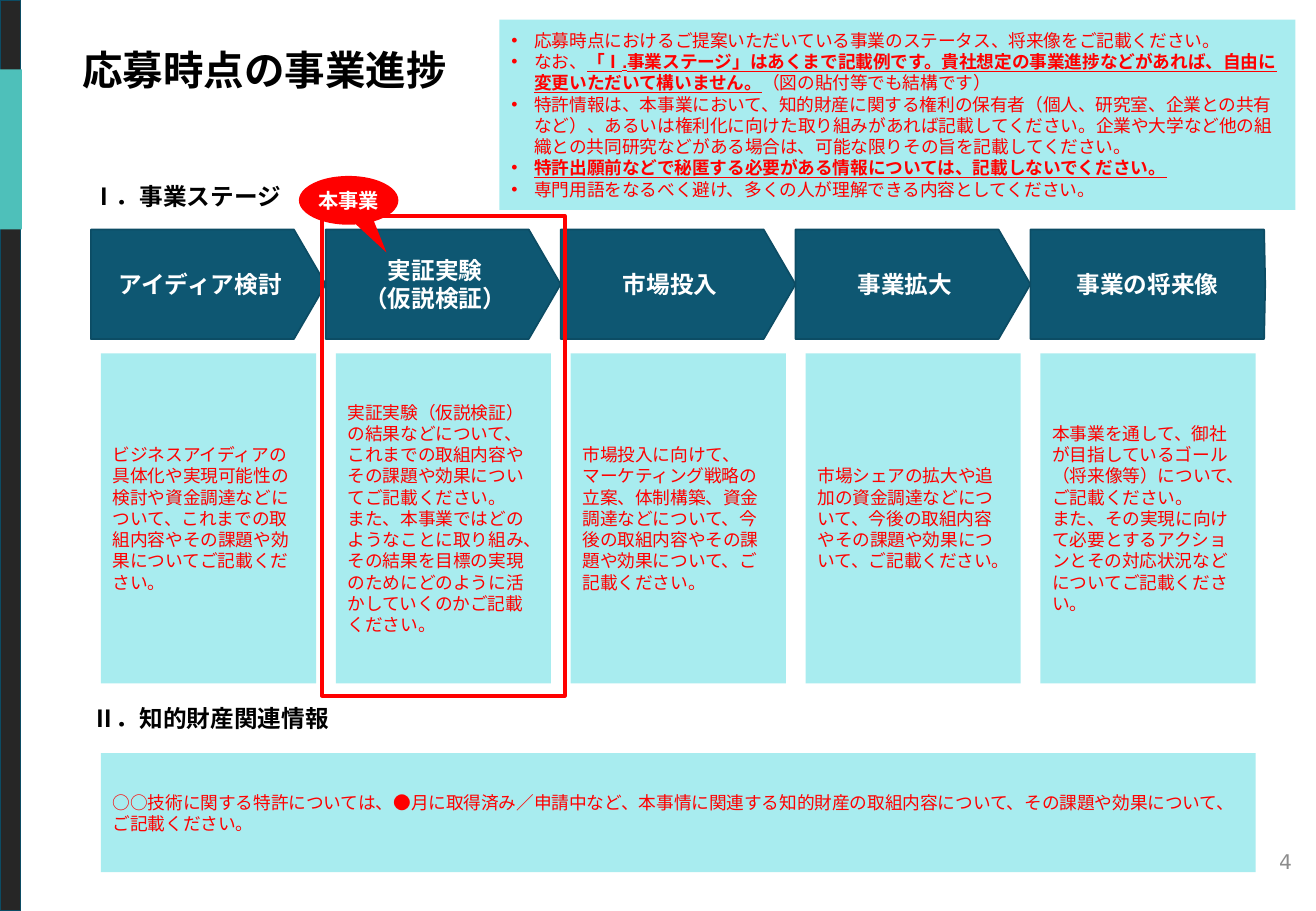
from copy import deepcopy

from pptx import Presentation
from pptx import util as u
from pptx.dml.color import RGBColor
from pptx.enum import lang, shapes, text
from pptx.oxml import ns, xmlchemy

COLORS = {
    "navy": "0E5772", "edge": "0C4C64", "pale": "A8ECEF", "teal": "4EC0BA",
    "dark": "262626", "red": "FF0000", "white": "FFFFFF", "black": "000000",
    "grey": "8C8C8C",
}
SHAPE = shapes.MSO_SHAPE
ALIGN = text.PP_ALIGN
MIDDLE = text.MSO_ANCHOR.MIDDLE

prs = Presentation()
prs.slide_width, prs.slide_height = u.Cm(27.51), u.Cm(19.05)
s = prs.slides.add_slide(prs.slide_layouts[6])


def add_box(kind, x, y, w, h, fill=None, line=None, weight=1):
    """Add a preset shape, or a text box when kind is None."""
    place = [u.Cm(v) for v in (x, y, w, h)]
    if kind is None:
        sp = s.shapes.add_textbox(*place)
    else:
        sp = s.shapes.add_shape(kind, *place)
        sp.shadow.inherit = False
        if fill:
            sp.fill.solid()
            sp.fill.fore_color.rgb = RGBColor.from_string(COLORS[fill])
        else:
            sp.fill.background()
        if line:
            sp.line.color.rgb = RGBColor.from_string(COLORS[line])
            sp.line.width = u.Pt(weight)
        else:
            sp.line.fill.background()
    sp.text_frame.word_wrap = True
    return sp


def style(tf, size, color, bold=False, align=ALIGN.LEFT, font="Arial", anchor=MIDDLE):
    """Format every run and line break of a text frame."""
    tf.vertical_anchor = anchor
    for p in tf.paragraphs:
        p.alignment = align
        for r in p.runs:
            r.font.name, r.font.size = font, u.Pt(size)
            r.font.bold = r.font.bold or bold
            r.font.color.rgb = RGBColor.from_string(COLORS[color])
            r.font.language_id = lang.MSO_LANGUAGE_ID.JAPANESE
        for br in p._p.findall(ns.qn("a:br")):
            br.append(deepcopy(p.runs[0]._r.rPr))


# Side bar
add_box(SHAPE.RECTANGLE, 0, 0, 0.43, 19.05, "dark", "edge")
add_box(SHAPE.RECTANGLE, -0.02, 1.45, 0.48, 3.35, "teal")

# Title and section headings
for words, x, y, w, h, size in [
    ("応募時点の事業進捗", 1.47, 0.81, 23.7, 1.27, 24),
    ("Ⅰ．事業ステージ", 1.68, 3.68, 11.86, 0.86, 14),
    ("Ⅱ．知的財産関連情報", 1.68, 14.6, 11.86, 0.86, 14),
]:
    tf = add_box(None, x, y, w, h).text_frame
    tf.text = words
    style(tf, size, "black", bold=True, anchor=text.MSO_ANCHOR.TOP)

# Instructions: each bullet is a list of (words, emphasised)
NOTES = [
    [("応募時点におけるご提案いただいている事業のステータス、将来像をご記載ください。", False)],
    [("なお、", False),
     ("「Ⅰ.事業ステージ」はあくまで記載例です。貴社想定の事業進捗などがあれば、"
      "自由に変更いただいて構いません。", True),
     ("（図の貼付等でも結構です）", False)],
    [("特許情報は、本事業において、知的財産に関する権利の保有者（個人、研究室、企業との共有など）、"
      "あるいは権利化に向けた取り組みがあれば記載してください。"
      "企業や大学など他の組織との共同研究などがある場合は、可能な限りその旨を記載してください。", False)],
    [("特許出願前などで秘匿する必要がある情報については、記載しないでください。", True)],
    [("専門用語をなるべく避け、多くの人が理解できる内容としてください。", False)],
]
tf = add_box(SHAPE.RECTANGLE, 10.44, 0.41, 16.64, 3.98, "pale").text_frame
for i, note in enumerate(NOTES):
    p = tf.add_paragraph() if i else tf.paragraphs[0]
    for words, emphasised in note:
        r = p.add_run()
        r.text = words
        r.font.bold = r.font.underline = emphasised
    pPr = p._p.get_or_add_pPr()
    pPr.set("marL", str(u.Cm(0.48)))
    pPr.set("indent", str(u.Cm(-0.48)))
    for tag, key, value in [("a:buFont", "typeface", "Arial"), ("a:buChar", "char", "•")]:
        bullet = xmlchemy.OxmlElement(tag)
        bullet.set(key, value)
        pPr.append(bullet)
style(tf, 10.5, "red")

# Stages: arrow heading with a description below
STAGES = [
    ("アイディア検討",
     "ビジネスアイディアの具体化や実現可能性の検討や資金調達などについて、"
     "これまでの取組内容やその課題や効果についてご記載ください。"),
    ("実証実験\v（仮説検証）",
     "実証実験（仮説検証）の結果などについて、これまでの取組内容やその課題や効果についてご記載ください。\n"
     "また、本事業ではどのようなことに取り組み、その結果を目標の実現のために"
     "どのように活かしていくのかご記載ください。"),
    ("市場投入",
     "市場投入に向けて、マーケティング戦略の立案、体制構築、資金調達などについて、"
     "今後の取組内容やその課題や効果について、ご記載ください。"),
    ("事業拡大",
     "市場シェアの拡大や追加の資金調達などについて、"
     "今後の取組内容やその課題や効果について、ご記載ください。"),
    ("事業の将来像",
     "本事業を通して、御社が目指しているゴール（将来像等）について、ご記載ください。\n"
     "また、その実現に向けて必要とするアクションとその対応状況などについてご記載ください。"),
]
PITCH = 4.91
for i, (stage, description) in enumerate(STAGES):
    sp = add_box(SHAPE.PENTAGON, 1.9 + i * PITCH, 4.8, PITCH, 2.29, "navy", "edge")
    sp.adjustments[0] = 0.01 if i == len(STAGES) - 1 else 0.29
    sp.text_frame.text = stage
    style(sp.text_frame, 14, "white", bold=True, align=ALIGN.CENTER)

    sp = add_box(SHAPE.RECTANGLE, 2.11 + i * PITCH, 7.39, 4.5, 6.9, "pale")
    sp.text_frame.text = description
    style(sp.text_frame, 10.5, "red")

# Intellectual property
tf = add_box(SHAPE.RECTANGLE, 2.11, 15.75, 24.14, 2.49, "pale").text_frame
tf.text = ("○○技術に関する特許については、●月に取得済み／申請中など、本事情に関連する"
           "知的財産の取組内容について、その課題や効果について、ご記載ください。")
style(tf, 10.5, "red")

# Current stage: frame and callout
add_box(SHAPE.RECTANGLE, 6.73, 4.52, 5.08, 10.03, line="red", weight=2.25)
sp = add_box(SHAPE.OVAL_CALLOUT, 6.25, 3.68, 2.08, 1.02, "red")
sp.adjustments[0], sp.adjustments[1] = 0.38, 1.07
tf = sp.text_frame
tf.margin_left = tf.margin_right = tf.margin_top = tf.margin_bottom = u.Cm(0.1)
tf.text = "本事業"
style(tf, 12, "white", bold=True, align=ALIGN.CENTER, font="DejaVu Sans")

# Page number
tf = add_box(None, 21.06, 17.5, 6.2, 1.02).text_frame
tf.text = "4"
style(tf, 12, "grey", align=ALIGN.RIGHT, font="DejaVu Sans")

prs.save("out.pptx")
